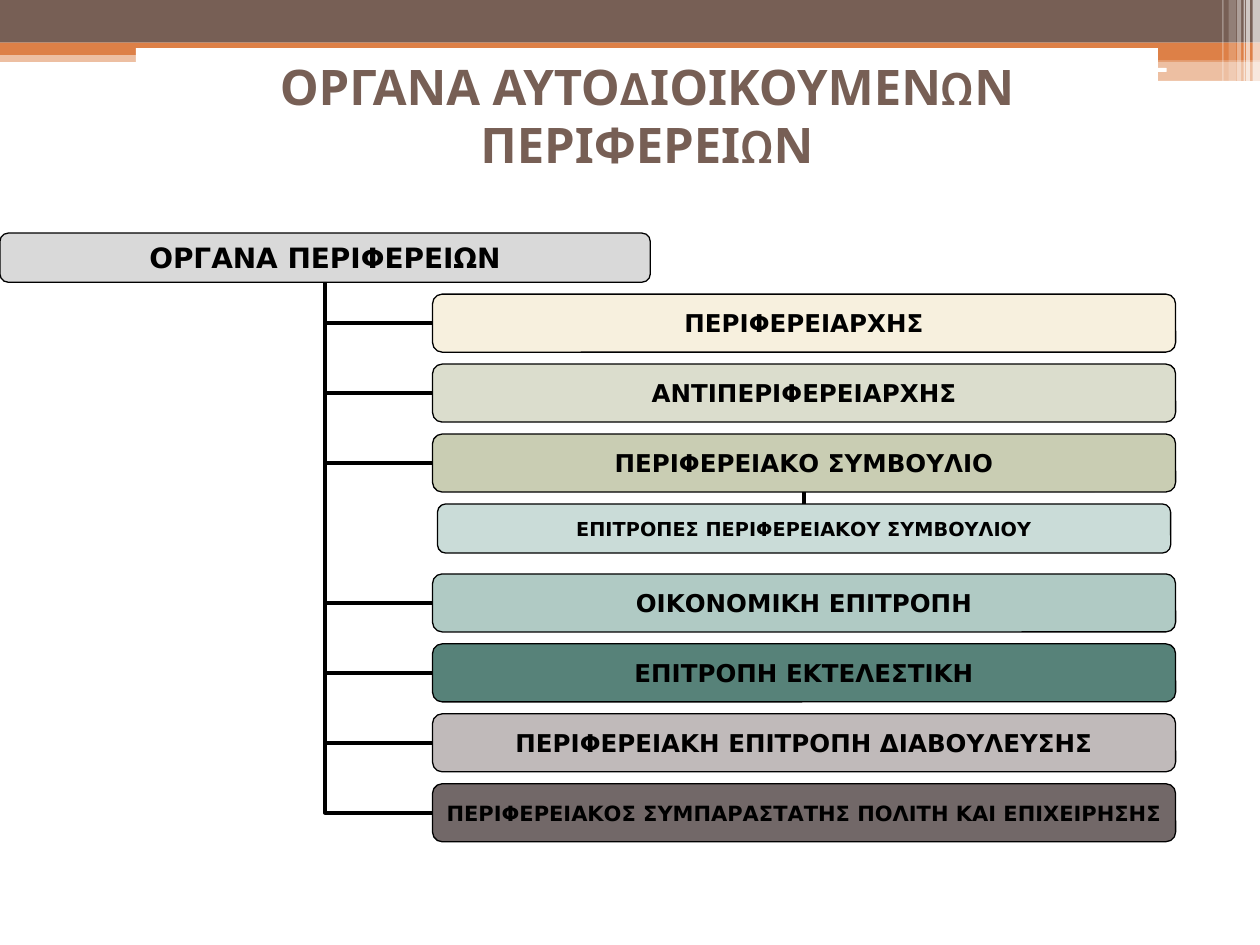
from lxml import etree
from pptx import Presentation
from pptx.dml.color import RGBColor
from pptx.enum.shapes import MSO_CONNECTOR, MSO_SHAPE
from pptx.enum.text import MSO_ANCHOR, PP_ALIGN
from pptx.oxml.ns import qn
from pptx.util import Cm, Pt

RECTANGLE = MSO_SHAPE.RECTANGLE
ROUNDED = MSO_SHAPE.ROUNDED_RECTANGLE
STRAIGHT = MSO_CONNECTOR.STRAIGHT
ELBOW = MSO_CONNECTOR.ELBOW
CENTER = PP_ALIGN.CENTER
MIDDLE = MSO_ANCHOR.MIDDLE
TOP, LEFT, BOTTOM = 0, 1, 2

COLORS = {
    "brown": "775F55", "orange": "DD8047", "white": "FFFFFF", "black": "000000",
    "root": "D9D9D9", "governor": "F7F0DE", "deputy": "DBDDCD",
    "council": "C9CDB3", "committees": "CADCD8", "economic": "B0CAC4",
    "executive": "578279", "consultation": "C0BABA", "ombudsman": "726868",
}

BANDS = [
    (RECTANGLE, 0, 1.02, 25.4, 0.23, "orange", 50),
    (RECTANGLE, 0, 0, 25.4, 0.86, "brown", 100),
    (RECTANGLE, 0, 0.86, 25.4, 0.25, "orange", 100),
    (RECTANGLE, 15.04, 0.99, 10.36, 0.23, "orange", 100),
    (RECTANGLE, 15.04, 1.22, 10.36, 0.41, "orange", 50),
    (ROUNDED, 15.01, 1.37, 8.51, 0.08, "white", 100),
    (ROUNDED, 20.47, 1.63, 4.45, 0.1, "white", 100),
]
STRIPES = [
    (25.25, 0.15, 1.73, 65), (25.12, 0.08, 1.73, 65), (25.07, 0.03, 1.73, 60),
    (24.94, 0.08, 1.73, 40), (24.77, 0.15, 1.63, 20), (24.64, 0.03, 1.63, 30),
]
BODIES = [
    ("governor", "ΠΕΡΙΦΕΡΕΙΑΡΧΗΣ", 14),
    ("deputy", "ΑΝΤΙΠΕΡΙΦΕΡΕΙΑΡΧΗΣ", 14),
    ("council", "ΠΕΡΙΦΕΡΕΙΑΚΟ ΣΥΜΒΟΥΛΙΟ", 14),
    ("committees", "ΕΠΙΤΡΟΠΕΣ ΠΕΡΙΦΕΡΕΙΑΚΟΥ ΣΥΜΒΟΥΛΙΟΥ", 11),
    ("economic", "ΟΙΚΟΝΟΜΙΚΗ ΕΠΙΤΡΟΠΗ", 14),
    ("executive", "ΕΠΙΤΡΟΠΗ ΕΚΤΕΛΕΣΤΙΚΗ", 14),
    ("consultation", "ΠΕΡΙΦΕΡΕΙΑΚΗ ΕΠΙΤΡΟΠΗ ΔΙΑΒΟΥΛΕΥΣΗΣ", 14),
    ("ombudsman", "ΠΕΡΙΦΕΡΕΙΑΚΟΣ ΣΥΜΠΑΡΑΣΤΑΤΗΣ ΠΟΛΙΤΗ ΚΑΙ ΕΠΙΧΕΙΡΗΣΗΣ", 12),
]
BODY_LEFT, BODY_TOP, BODY_WIDTH, BODY_HEIGHT, PITCH = 8.72, 5.93, 14.98, 1.17, 1.41
SMALL_HEIGHT, SMALL_INDENT = 0.99, 0.1


def rgb(name):
    return RGBColor.from_string(COLORS[name])


def write_text(shape, text, size, font="DejaVu Sans", color="black", wrap=False):
    frame = shape.text_frame
    frame.word_wrap = wrap
    frame.vertical_anchor = MIDDLE
    para = frame.paragraphs[0]
    para.alignment = CENTER
    span = para.add_run()
    span.text = text
    span.font.name = font
    span.font.size = Pt(size)
    span.font.bold = True
    span.font.color.rgb = rgb(color)


def add_filled(page, kind, left, top, width, height, color, opacity=100):
    shape = page.shapes.add_shape(kind, Cm(left), Cm(top), Cm(width), Cm(height))
    shape.shadow.inherit = False
    shape.fill.solid()
    shape.fill.fore_color.rgb = rgb(color)
    shape.line.fill.background()
    if opacity < 100:
        tint = shape.fill._xPr.find(qn("a:solidFill"))[0]
        etree.SubElement(tint, qn("a:alpha")).set("val", str(opacity * 1000))
    return shape


def add_box(page, left, top, width, height, color, text, size):
    box = add_filled(page, ROUNDED, left, top, width, height, color)
    box.line.color.rgb = rgb("black")
    box.line.width = Pt(0.75)
    frame = box.text_frame
    frame.margin_left = frame.margin_right = Cm(0.05)
    frame.margin_top = frame.margin_bottom = Cm(0.03)
    write_text(box, text, size)
    return box


def link(page, kind, child, child_site, parent):
    start_x = child.left if child_site == LEFT else child.left + child.width // 2
    start_y = child.top + child.height // 2 if child_site == LEFT else child.top
    line = page.shapes.add_connector(
        kind, start_x, start_y,
        parent.left + parent.width // 2, parent.top + parent.height)
    line.begin_connect(child, child_site)
    line.end_connect(parent, BOTTOM)
    line.line.color.rgb = rgb("black")
    line.line.width = Pt(2.25)
    properties = line._element.spPr
    etree.SubElement(properties, qn("a:effectLst"))
    if kind == ELBOW:
        properties.find(qn("a:prstGeom")).set("prst", "bentConnector2")


def add_header(page):
    for kind, left, top, width, height, color, opacity in BANDS:
        add_filled(page, kind, left, top, width, height, color, opacity)
    for left, width, height, opacity in STRIPES:
        add_filled(page, RECTANGLE, left, 0, width, height, "white", opacity)


def add_title(page, text):
    title = page.shapes.title
    title.left, title.top, title.width, title.height = Cm(2.74), Cm(0.97), Cm(20.6), Cm(2.69)
    title.fill.solid()
    title.fill.fore_color.rgb = rgb("white")
    write_text(title, text, 28, font="Karla", color="brown", wrap=True)
    title._element.getparent().append(title._element)


def add_chart_of_bodies(page):
    root = add_box(page, 0, 4.7, 13.11, SMALL_HEIGHT, "root", "ΟΡΓΑΝΑ ΠΕΡΙΦΕΡΕΙΩΝ", 16)
    boxes = {}
    for row, (name, text, size) in enumerate(BODIES):
        small = name == "committees"
        indent = SMALL_INDENT if small else 0
        height = SMALL_HEIGHT if small else BODY_HEIGHT
        boxes[name] = add_box(
            page, BODY_LEFT + indent, BODY_TOP + row * PITCH,
            BODY_WIDTH - 2 * indent, height, name, text, size)
    for name, box in boxes.items():
        if name == "committees":
            link(page, STRAIGHT, box, TOP, boxes["council"])
        else:
            link(page, ELBOW, box, LEFT, root)


def main():
    deck = Presentation()
    deck.slide_width, deck.slide_height = Cm(25.4), Cm(19.05)
    page = deck.slides.add_slide(deck.slide_layouts[5])
    add_header(page)
    add_title(page, "ΟΡΓΑΝΑ ΑΥΤΟΔΙΟΙΚΟΥΜΕΝΩΝ ΠΕΡΙΦΕΡΕΙΩΝ")
    add_chart_of_bodies(page)
    deck.save("out.pptx")


if __name__ == "__main__":
    main()
